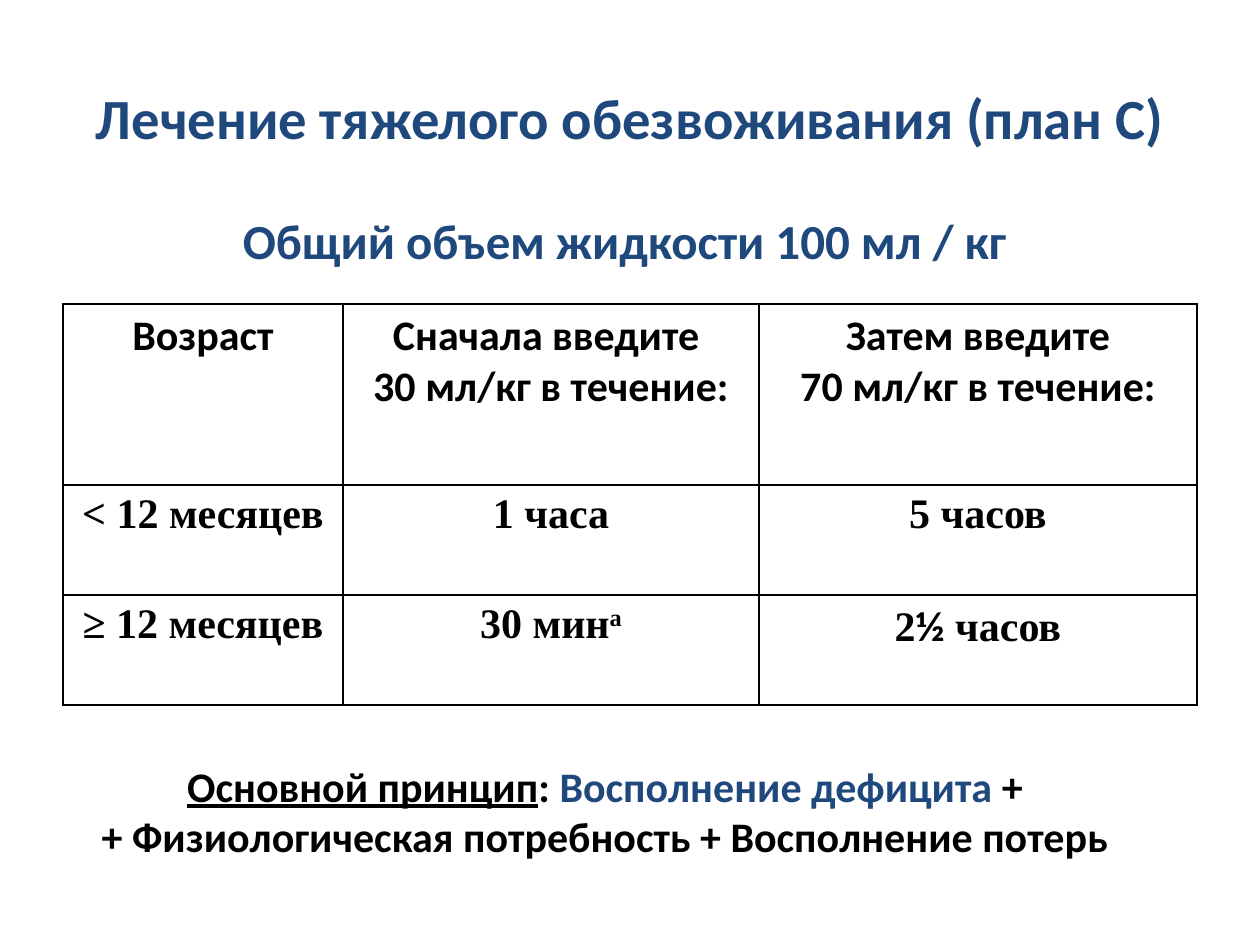
import lxml.etree
import pptx
import pptx.dml.color
import pptx.enum.text
import pptx.oxml.ns
import pptx.util

EMU_PER_PX = 914400 / 126
ALIGN = pptx.enum.text.PP_ALIGN
ANCHOR = pptx.enum.text.MSO_ANCHOR
AUTO = pptx.enum.text.MSO_AUTO_SIZE


class Theme:
    navy = "1F497D"
    black = "000000"
    sans = "Calibri"
    serif = "Times New Roman"
    title_size = 32.4
    subtitle_size = 28
    body_size = 24
    border_width = 1
    hanging_indent = 48


def px(value):
    return pptx.util.Emu(round(value * EMU_PER_PX))


def apply(target, values):
    for name, value in values.items():
        setattr(target, name, value)


def add_span(para, text, size=Theme.body_size, color=Theme.black,
             face=Theme.sans, underline=False, baseline=0):
    span = para.add_run()
    span.text = text
    apply(span.font, {"name": face, "size": pptx.util.Pt(size),
                      "bold": True, "underline": underline})
    span.font.color.rgb = pptx.dml.color.RGBColor.from_string(color)
    if baseline:
        span.font._element.set("baseline", str(baseline * 1000))


def write_paragraphs(frame, paragraphs, hanging=0):
    for index, spans in enumerate(paragraphs):
        para = frame.add_paragraph() if index else frame.paragraphs[0]
        para.alignment = ALIGN.CENTER
        if hanging:
            properties = para._p.get_or_add_pPr()
            properties.set("marL", str(px(hanging)))
            properties.set("indent", str(px(-hanging)))
        for text, style in spans:
            add_span(para, text, **style)


def add_text(page, bounds, paragraphs, **frame_format):
    box = page.shapes.add_textbox(*map(px, bounds))
    apply(box.text_frame, frame_format)
    write_paragraphs(box.text_frame, paragraphs)


def set_borders(cell):
    properties = cell._tc.get_or_add_tcPr()
    for side in ("lnL", "lnR", "lnT", "lnB"):
        line = lxml.etree.SubElement(
            properties, pptx.oxml.ns.qn(f"a:{side}"),
            w=str(pptx.util.Pt(Theme.border_width)))
        fill = lxml.etree.SubElement(line, pptx.oxml.ns.qn("a:solidFill"))
        lxml.etree.SubElement(
            fill, pptx.oxml.ns.qn("a:srgbClr"), val=Theme.black)


def add_grid(page, left, top, widths, heights, rows):
    frame = page.shapes.add_table(
        len(heights), len(widths),
        *map(px, (left, top, sum(widths), sum(heights))))
    table = frame.table
    apply(table, {"first_row": False, "horz_banding": False})
    for column, width in zip(table.columns, widths):
        column.width = px(width)
    for row, height, contents in zip(table.rows, heights, rows):
        row.height = px(height)
        for cell, paragraphs in zip(row.cells, contents):
            set_borders(cell)
            cell.fill.background()
            write_paragraphs(cell.text_frame, paragraphs, Theme.hanging_indent)


def main():
    deck = pptx.Presentation()
    apply(deck, {"slide_width": px(1260), "slide_height": px(945)})
    page = deck.slides.add_slide(deck.slide_layouts[6])

    serif = {"face": Theme.serif}
    navy = {"color": Theme.navy}
    growing = {"word_wrap": False, "auto_size": AUTO.SHAPE_TO_FIT_TEXT}

    add_text(page, (63, 38, 1134, 157),
             [[("Лечение тяжелого обезвоживания (план С)",
                {"size": Theme.title_size, **navy})]],
             word_wrap=True, vertical_anchor=ANCHOR.MIDDLE)

    rows = [
        [[[("Возраст", {})]],
         [[("Сначала введите ", {})], [("30 мл/кг в течение:", {})]],
         [[("Затем введите", {})], [("70 мл/кг в течение:", {})]]],
        [[[(text, serif)]] for text in ("< 12 месяцев", "1 часа", "5 часов")],
        [[[("≥ 12 месяцев", serif)]],
         [[("30 мин", serif), ("a", {"baseline": 30, **serif})]],
         [[("2", serif), ("½", {}), (" часов", serif)]]],
    ]
    add_grid(page, 63, 304, (280, 416, 438), (181, 110, 110), rows)

    add_text(page, (185, 204, 890, 72),
             [[("Общий объем жидкости 100 мл / кг ",
                {"size": Theme.subtitle_size, **navy})]], **growing)
    add_text(page, (5, 754, 1200, 114),
             [[("Основной принцип", {"underline": True}), (": ", {}),
               ("Восполнение дефицита ", navy), ("+", {})],
              [("+ Физиологическая потребность + Восполнение потерь", {})]],
             **growing)

    deck.save("out.pptx")


if __name__ == "__main__":
    main()
